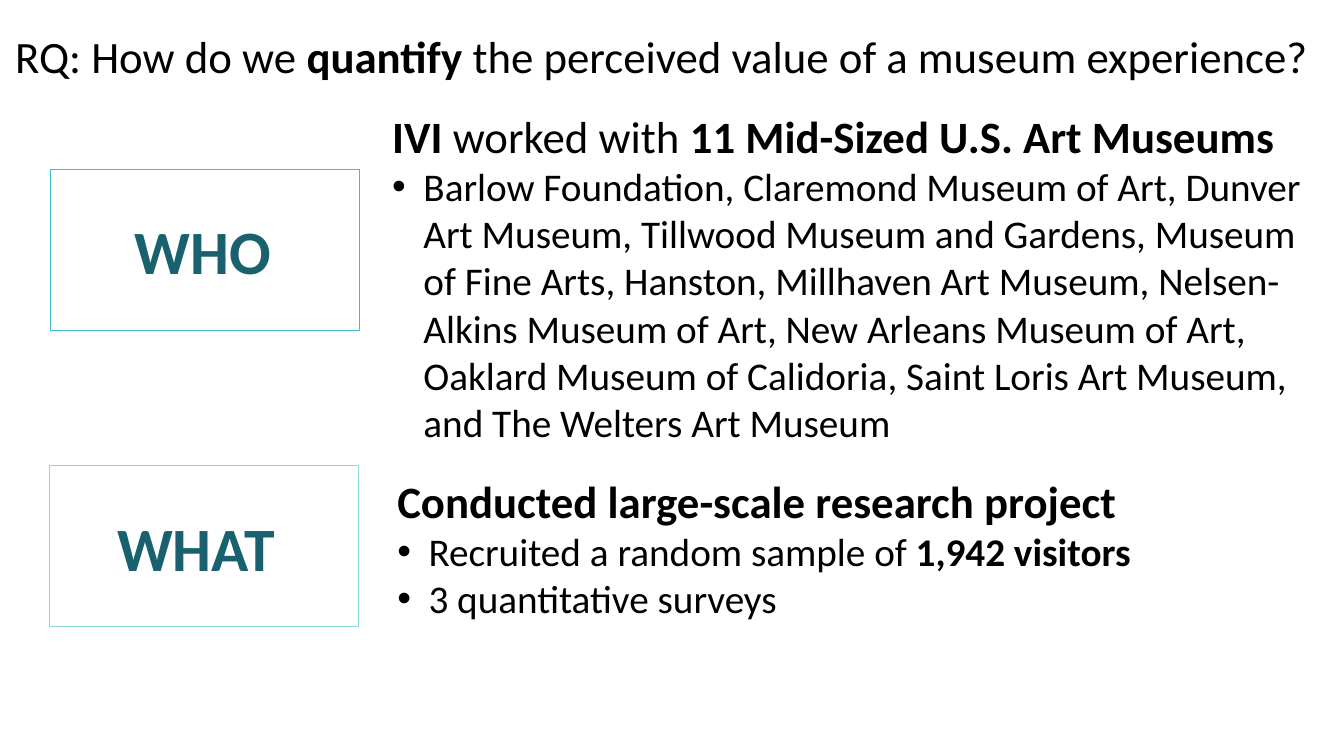
import pptx
import pptx.util
import pptx.dml.color
import pptx.enum.shapes
import pptx.enum.text
import pptx.oxml
import lxml.etree

Inches, Pt = pptx.util.Inches, pptx.util.Pt
ALIGN = pptx.enum.text.PP_ALIGN
COLOURS = {"ink": "000000", "label": "1A616F", "who": "40BAD2", "what": "8CD6E4"}
INDENT = Inches(0.31)


def place(box, left, top, width, height):
    box.left, box.top, box.width, box.height = map(Inches, (left, top, width, height))
    box.text_frame.word_wrap = True
    box.text_frame.auto_size = pptx.enum.text.MSO_AUTO_SIZE.NONE
    box.text_frame.vertical_anchor = pptx.enum.text.MSO_ANCHOR.TOP


def write(para, text, size, colour="ink", align=ALIGN.LEFT):
    """Fill a paragraph; parts between asterisks alternate to bold."""
    para.alignment = align
    para.space_before = Pt(0)
    para.font.name = "Calibri"
    para.font.size = Pt(size)
    para.font.color.rgb = pptx.dml.color.RGBColor.from_string(COLOURS[colour])
    for number, part in enumerate(text.split("*")):
        if part:
            span = para.add_run()
            span.text = part
            span.font.name = "Calibri"
            span.font.size = Pt(size)
            span.font.color.rgb = para.font.color.rgb
            span.font.bold = number % 2 == 1


deck = pptx.Presentation()
deck.slide_width, deck.slide_height = Inches(13.33), Inches(7.5)
page = deck.slides.add_slide(deck.slide_layouts.get_by_name("Two Content"))
title, who_body, what_body = list(page.placeholders)[:3]
for extra in list(page.placeholders)[3:]:
    extra.element.getparent().remove(extra.element)

place(title, 0.05, 0.23, 13.26, 0.64)
write(title.text_frame.paragraphs[0],
      "RQ: How do we *quantify* the perceived value of a museum experience?", 32)

bodies = [
    (who_body, (3.79, 1.03, 9.34, 3.47), [
        "*IVI* worked with *11 Mid-Sized U.S. Art Museums*",
        "Barlow Foundation, Claremond Museum of Art, Dunver Art Museum, "
        "Tillwood Museum and Gardens, Museum of Fine Arts, Hanston, "
        "Millhaven Art Museum, Nelsen-Alkins Museum of Art, "
        "New Arleans Museum of Art, Oaklard Museum of Calidoria, "
        "Saint Loris Art Museum, and The Welters Art Museum"]),
    (what_body, (3.84, 4.65, 9.49, 1.58), [
        "*Conducted large-scale research project*",
        "Recruited a random sample of *1,942 visitors*",
        "3 quantitative surveys"]),
]
for body, area, lines in bodies:
    place(body, *area)
    for row, line in enumerate(lines):
        para = body.text_frame.paragraphs[0] if row == 0 else body.text_frame.add_paragraph()
        write(para, line, 28 if row else 32)
        props = para._p.get_or_add_pPr()
        props.set("marL", str(INDENT if row else 0))
        props.set("indent", str(-INDENT if row else 0))
        bullet = pptx.oxml.parse_xml(
            '<a:%s xmlns:a="http://schemas.openxmlformats.org/drawingml/2006/main"/>'
            % ("buChar" if row else "buNone"))
        if row:
            bullet.set("char", "•")
        props.insert_element_before(bullet, "a:tabLst", "a:defRPr", "a:extLst")

labels = [
    ("WHO", "who", (1.15, 2.06, 1.72, 0.84), (0.5, 1.68)),
    ("WHAT", "what", (0.85, 5.01, 2.19, 0.84), (0.49, 4.62)),
]
for word, edge, area, corner in labels:
    label = page.shapes.add_textbox(0, 0, 0, 0)
    place(label, *area)
    write(label.text_frame.paragraphs[0], f"*{word}*", 44, "label", ALIGN.CENTER)
    frame = page.shapes.add_shape(pptx.enum.shapes.MSO_SHAPE.RECTANGLE,
                                  *map(Inches, (*corner, 3.07, 1.6)))
    frame.shadow.inherit = False
    frame.fill.background()
    frame.line.color.rgb = pptx.dml.color.RGBColor.from_string(COLOURS[edge])
    frame.line.width = Pt(0.85)

deck.save("out.pptx")
